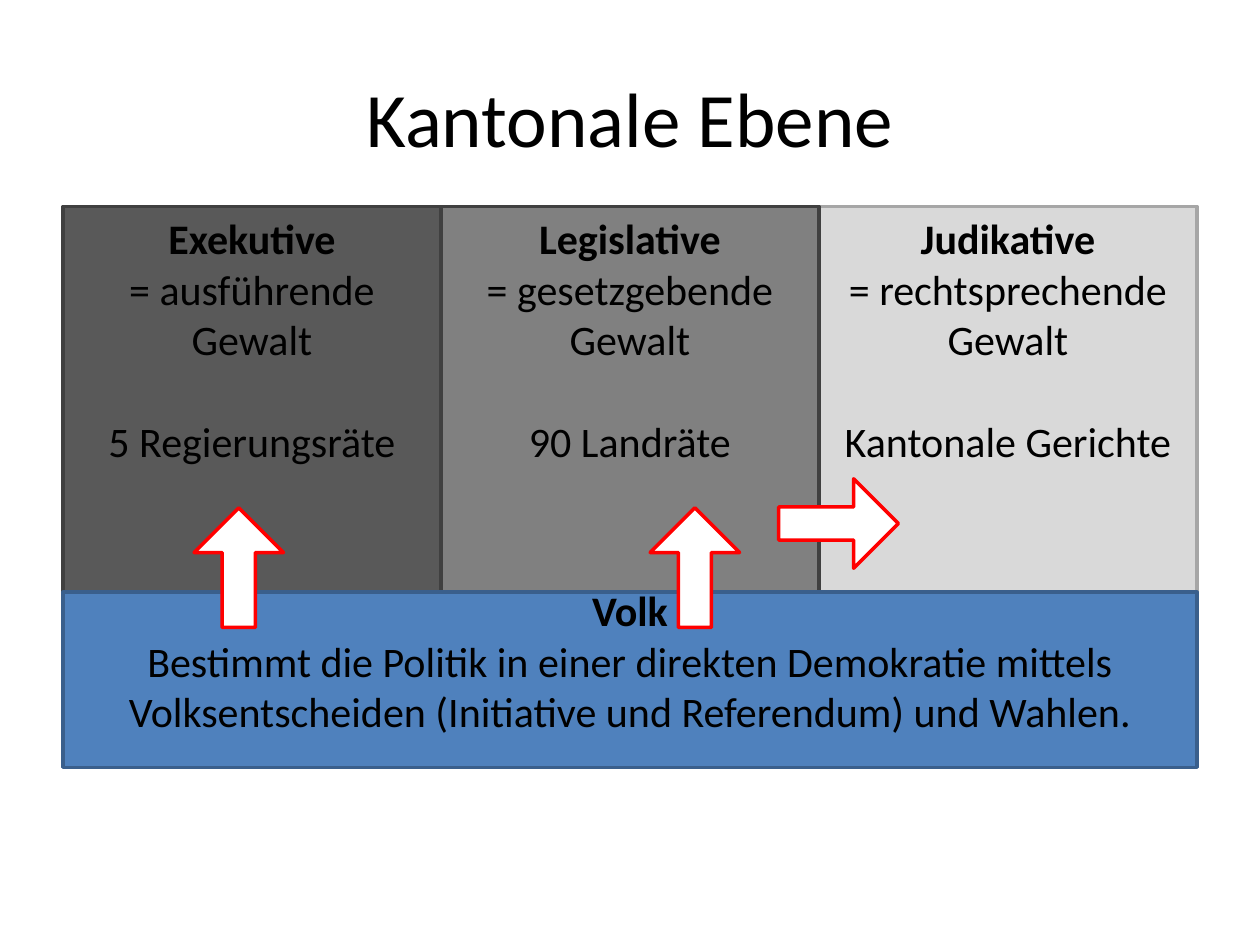
from pptx import Presentation, util as u
from pptx.dml.color import RGBColor
from pptx.enum import shapes, text

COL, LEFT, TOP, TALL = 3, 0.5, 1.64, 3.06
FONT = dict(name="Calibri", size=u.Pt(24))
POWERS = [
    ("Exekutive", "= ausführende Gewalt", "5 Regierungsräte", "595959", "404040"),
    ("Legislative", "= gesetzgebende Gewalt", "90 Landräte", "808080", "404040"),
    ("Judikative", "= rechtsprechende Gewalt", "Kantonale Gerichte", "D9D9D9", "A6A6A6"),
]
PEOPLE = ("Bestimmt die Politik in einer direkten Demokratie mittels "
          "Volksentscheiden (Initiative und Referendum) und Wahlen.")


def paint(color, value):
    color.rgb = RGBColor.from_string(value)


def inches(box):
    return [u.Inches(n) for n in box]


def block(slide, kind, box, fill, line):
    shape = slide.shapes.add_shape(kind, *inches(box))
    shape.shadow.inherit = False
    shape.fill.solid()
    paint(shape.fill.fore_color, fill)
    paint(shape.line.color, line)
    shape.line.width = u.Pt(2)
    return shape


def write(frame, lines, **style):
    """Centre the lines, the first of them bold."""
    frame.word_wrap = True
    for i, line in enumerate(lines):
        para = frame.paragraphs[0] if i == 0 else frame.add_paragraph()
        para.text = line
        para.alignment = text.PP_ALIGN.CENTER
        font = para.runs[0].font
        for key, value in {**FONT, "bold": i == 0, **style}.items():
            setattr(font, key, value)
        paint(font.color, "000000")


def heading(slide, box):
    title = slide.shapes.title
    title.left, title.top, title.width, title.height = inches(box)
    frame = title.text_frame
    frame.vertical_anchor = text.MSO_ANCHOR.MIDDLE
    write(frame, ["Kantonale Ebene"], size=u.Pt(44), bold=False)


def powers(slide, box):
    left, top, width, height = box
    wide = width / len(POWERS)
    spots = [(left + i * wide, top, wide, height) for i in range(len(POWERS))]
    for i in (0, 2, 1):  # the middle border lies on top
        block(slide, shapes.MSO_SHAPE.RECTANGLE, spots[i], *POWERS[i][3:])
    for spot, power in zip(spots, POWERS):
        label = slide.shapes.add_textbox(*inches((*spot[:3], 2.42)))
        write(label.text_frame, power[:3])
        label.text_frame.paragraphs[-1].space_before = u.Pt(29.3)


def people(slide, box):
    base = block(slide, shapes.MSO_SHAPE.RECTANGLE, box, "4F81BD", "3A5F8C")
    frame = base.text_frame
    frame.vertical_anchor = text.MSO_ANCHOR.MIDDLE
    frame.margin_bottom = u.Inches(0.36)
    write(frame, ["Volk", PEOPLE])


def arrow(slide, left, top, turn):
    shape = block(slide, shapes.MSO_SHAPE.RIGHT_ARROW,
                  (left, top, 0.95, 0.71), "FFFFFF", "FF0000")
    shape.adjustments[0] = 0.37
    shape.rotation = turn


def main():
    deck = Presentation()
    deck.slide_width, deck.slide_height = inches((10, 7.5))
    slide = deck.slides.add_slide(deck.slide_layouts[5])
    width = COL * len(POWERS)
    heading(slide, (LEFT, 0.3, width, 1.25))
    powers(slide, (LEFT, TOP, width, TALL))
    people(slide, (LEFT, TOP + TALL, width, 1.39))
    for left, top, turn in ((5.04, 4.15, 270), (6.18, 3.8, 0), (1.42, 4.15, 270)):
        arrow(slide, left, top, turn)
    deck.save("out.pptx")


if __name__ == "__main__":
    main()
